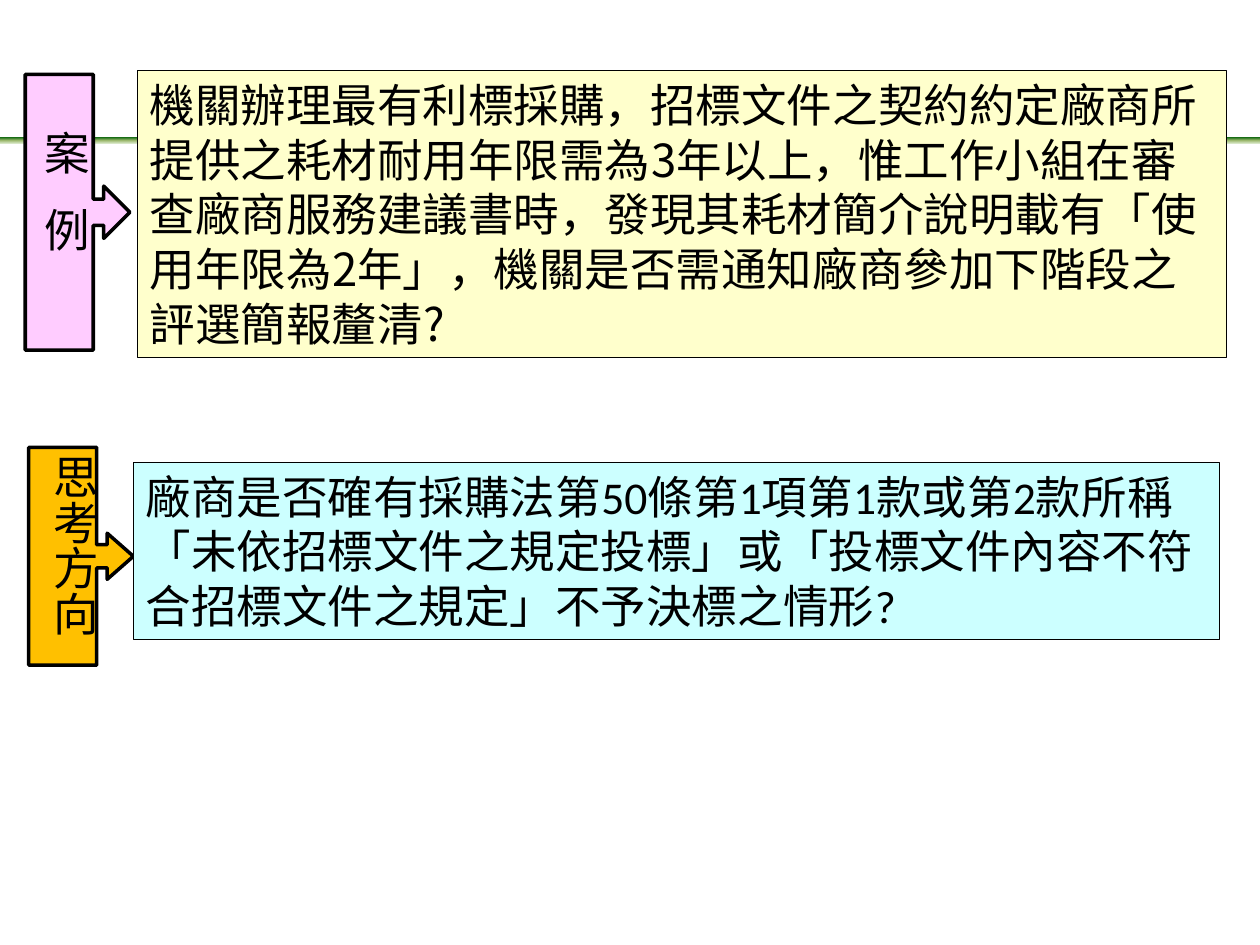
"""Build a slide pairing a procurement case with the direction of thought."""
from copy import deepcopy
from typing import NamedTuple

from pptx import Presentation
from pptx.dml.color import RGBColor
from pptx.enum.shapes import MSO_SHAPE
from pptx.enum.text import MSO_AUTO_SIZE, PP_ALIGN
from pptx.oxml.ns import qn
from pptx.util import Cm, Pt

BLACK = RGBColor(0x00, 0x00, 0x00)
PINK = RGBColor(0xFF, 0xCC, 0xFF)
CREAM = RGBColor(0xFF, 0xFF, 0xCC)
GOLD = RGBColor(0xFF, 0xC0, 0x00)
AQUA = RGBColor(0xCC, 0xFF, 0xFF)
GREENS = (
    RGBColor(0x15, 0x6B, 0x13),
    RGBColor(0x9C, 0xB8, 0x6E),
    RGBColor(0xDD, 0xEB, 0xCF),
)
LATIN = "Calibri"
ASIAN = "Noto Sans CJK SC"
SIZE = Pt(26)
PITCH = Pt(31.3)
GAP = "1750"


class Area(NamedTuple):
    """Place and size in centimetres."""
    left: float
    top: float
    width: float
    height: float

    def emu(self) -> list:
        return [Cm(side) for side in self]


class Topic(NamedTuple):
    """An arrow with an upright tag and the text it points to."""
    arrow: Area
    notch: float
    tint: RGBColor
    tag: Area
    words: tuple
    body: Area
    paper: RGBColor
    text: str
    font: str


TOPICS = (
    Topic(
        Area(0.51, 1.5, 2.11, 5.56), 0.25, PINK,
        Area(0.36, 2.39, 1.63, 3.63), ("案", "例"),
        Area(2.77, 1.42, 21.95, 5.79), CREAM,
        "機關辦理最有利標採購，招標文件之契約約定廠商所提供之耗材耐用年限需為3年以上，"
        "惟工作小組在審查廠商服務建議書時，發現其耗材簡介說明載有「使用年限為2年」，"
        "機關是否需通知廠商參加下階段之評選簡報釐清?",
        ASIAN,
    ),
    Topic(
        Area(0.58, 9.02, 2.11, 4.39), 0.22, GOLD,
        Area(0.56, 8.92, 1.63, 4.72), ("思考方向",),
        Area(2.69, 9.32, 21.89, 3.58), AQUA,
        "廠商是否確有採購法第50條第1項第1款或第2款所稱「未依招標文件之規定投標」"
        "或「投標文件內容不符合招標文件之規定」不予決標之情形?",
        LATIN,
    ),
)


def paint(shape, fill: RGBColor, width: float) -> None:
    shape.fill.solid()
    shape.fill.fore_color.rgb = fill
    shape.line.color.rgb = BLACK
    shape.line.width = Pt(width)


def style(run, name: str) -> None:
    run.font.size = SIZE
    run.font.name = name
    run.font.color.rgb = BLACK
    marks = run.font._element
    marks.append(marks.makeelement(qn("a:ea"), {"typeface": ASIAN}))


def draw_band(slide, area: Area) -> None:
    band = slide.shapes.add_shape(MSO_SHAPE.RECTANGLE, *area.emu())
    band.shadow.inherit = False
    band.line.fill.background()
    band.fill.gradient()
    band.fill.gradient_angle = 270
    stops = band.element.spPr.find(qn("a:gradFill")).find(qn("a:gsLst"))
    stops.append(deepcopy(stops[-1]))
    for spot, (stop, green) in enumerate(zip(band.fill.gradient_stops, GREENS)):
        stop.position = spot / 2
        stop.color.rgb = green


def draw_arrow(slide, topic: Topic) -> None:
    arrow = slide.shapes.add_shape(
        MSO_SHAPE.RIGHT_ARROW_CALLOUT, *topic.arrow.emu())
    arrow.shadow.inherit = False
    for spot, value in enumerate((topic.notch, topic.notch, 0.25, 0.65)):
        arrow.adjustments[spot] = value
    paint(arrow, topic.tint, 2)


def draw_tag(slide, topic: Topic) -> None:
    box = slide.shapes.add_textbox(*topic.tag.emu())
    frame = box.text_frame
    frame.word_wrap = True
    frame.auto_size = MSO_AUTO_SIZE.SHAPE_TO_FIT_TEXT
    box.element.txBody.bodyPr.set("vert", "eaVert")
    line = frame.paragraphs[0]
    line.alignment = PP_ALIGN.CENTER
    for word in topic.words:
        run = line.add_run()
        run.text = word
        style(run, LATIN)
    for run in line.runs[:-1]:
        run.font._element.set("spc", GAP)


def draw_body(slide, topic: Topic) -> None:
    box = slide.shapes.add_textbox(*topic.body.emu())
    paint(box, topic.paper, 0.75)
    frame = box.text_frame
    frame.word_wrap = True
    frame.text = topic.text
    line = frame.paragraphs[0]
    line.line_spacing = PITCH
    style(line.runs[0], topic.font)


def main() -> None:
    deck = Presentation()
    deck.slide_width, deck.slide_height = Cm(25.4), Cm(19.05)
    slide = deck.slides.add_slide(deck.slide_layouts[6])
    draw_band(slide, Area(0, 2.77, 25.4, 0.13))
    for topic in TOPICS:
        draw_arrow(slide, topic)
        draw_tag(slide, topic)
        draw_body(slide, topic)
    deck.save("out.pptx")


if __name__ == "__main__":
    main()
